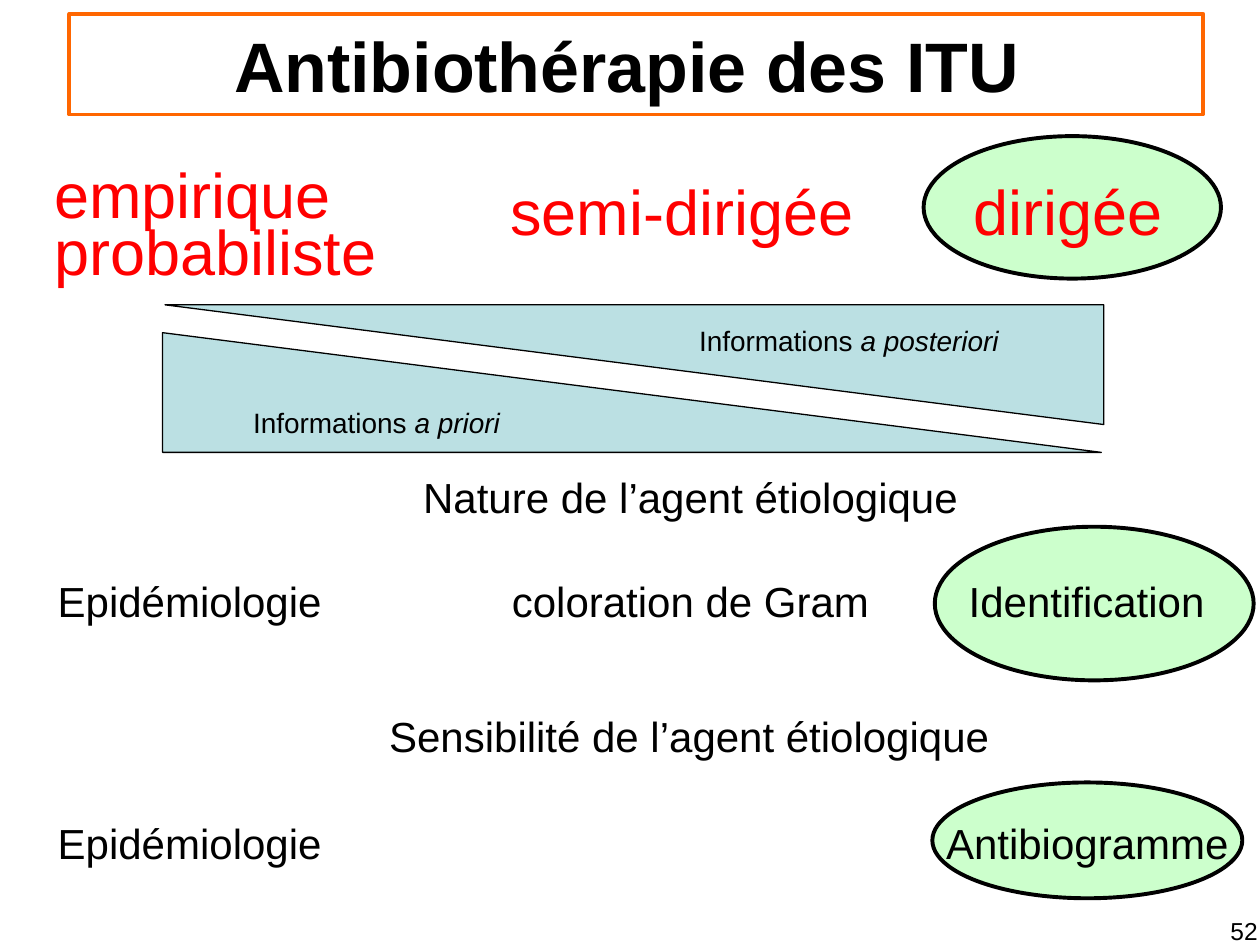
from dataclasses import dataclass

from pptx import Presentation
from pptx.dml.color import RGBColor
from pptx.enum.shapes import MSO_SHAPE
from pptx.enum.text import MSO_ANCHOR, PP_ALIGN
from pptx.shapes.autoshape import Shape
from pptx.slide import Slide
from pptx.util import Pt

COLORS = {
    "text": "000000",
    "heading": "FF0000",
    "frame": "FF6600",
    "highlight": "CCFFCC",
    "wedge": "BBE0E3",
}
FONT = "Arial"
BODY_HEIGHT = 36
IDENTIFICATION_TOP = 325.4
SENSITIVITY_TOP = 463.7


@dataclass
class Area:
    left: float
    top: float
    width: float
    height: float


@dataclass
class Label:
    area: Area
    text: str
    size: float = 24
    color: str = "text"
    italic: str = ""
    bold: bool = False
    align: PP_ALIGN = PP_ALIGN.LEFT
    wrap: bool = False
    top_inset: float = 3.6


HIGHLIGHTS = [
    Area(532.8, 447.1, 177.1, 66.2),
    Area(534.2, 301, 182.2, 87.8),
    Area(527.8, 77.8, 169.9, 81.4),
]
TITLE = Label(Area(39.6, 7.9, 648, 57.6), "Antibiothérapie des ITU ", 40,
              bold=True, align=PP_ALIGN.CENTER, wrap=True)
PRIOR = Label(Area(92.9, 190.1, 536.4, 68.4), "Informations ", 16, italic="a priori")
POSTERIOR_WEDGE = Area(94.3, 174.2, 536.4, 68.4)
POSTERIOR = Label(Area(392.4, 181.4, 186.5, 26.6), "Informations ", 16,
                  italic="a posteriori")
PAGE_NUMBER = Label(Area(557.3, 519.8, 168.5, 29.5), "52", 14,
                    align=PP_ALIGN.RIGHT, wrap=True)


def heading(text: str, area: Area) -> Label:
    return Label(area, text, 36, "heading", wrap=True, top_inset=7.2)


def body(text: str, left: float, top: float, width: float,
         align: PP_ALIGN = PP_ALIGN.LEFT) -> Label:
    return Label(Area(left, top, width, BODY_HEIGHT), text, align=align)


HEADINGS = [
    heading("empirique", Area(23.8, 81.4, 185.8, 43.9)),
    heading("probabiliste", Area(23.8, 114.5, 207.4, 43.9)),
    heading("semi-dirigée", Area(284.4, 91.4, 220.3, 58.3)),
    heading("dirigée", Area(549.4, 91.4, 143.3, 58.3)),
]
BODY = [
    body("Nature de l’agent étiologique", 234.7, 265.7, 320.4),
    body("Epidémiologie", 25.9, IDENTIFICATION_TOP, 165.6),
    body("coloration de Gram", 285.1, IDENTIFICATION_TOP, 218.9, PP_ALIGN.CENTER),
    body("Identification", 546.5, IDENTIFICATION_TOP, 149),
    body("Sensibilité de l’agent étiologique", 215.3, 402.5, 357.8),
    body("Epidémiologie", 25.9, SENSITIVITY_TOP, 165.6),
    body("Antibiogramme", 533.5, SENSITIVITY_TOP, 176.4),
]


def color(name: str) -> RGBColor:
    return RGBColor.from_string(COLORS[name])


def bounds(area: Area) -> tuple[Pt, Pt, Pt, Pt]:
    return Pt(area.left), Pt(area.top), Pt(area.width), Pt(area.height)


def draw_shape(page: Slide, kind: MSO_SHAPE, area: Area, fill: str,
               line: str, line_width: float) -> Shape:
    shape = page.shapes.add_shape(kind, *bounds(area))
    shape.shadow.inherit = False
    if fill:
        shape.fill.solid()
        shape.fill.fore_color.rgb = color(fill)
    else:
        shape.fill.background()
    shape.line.color.rgb = color(line)
    shape.line.width = Pt(line_width)
    return shape


def write_label(shape: Shape, label: Label, anchor: MSO_ANCHOR) -> None:
    frame = shape.text_frame
    frame.text = label.text
    frame.word_wrap = label.wrap
    frame.vertical_anchor = anchor
    frame.margin_top = Pt(label.top_inset)
    para = frame.paragraphs[0]
    para.alignment = label.align
    if label.italic:
        span = para.add_run()
        span.text = label.italic
        span.font.italic = True
    for span in para.runs:
        span.font.name = FONT
        span.font.size = Pt(label.size)
        span.font.bold = label.bold
        span.font.color.rgb = color(label.color)


def draw_label(page: Slide, label: Label) -> None:
    box = page.shapes.add_textbox(*bounds(label.area))
    write_label(box, label, MSO_ANCHOR.TOP)


def main() -> None:
    deck = Presentation()
    deck.slide_width, deck.slide_height = Pt(720), Pt(540)
    page = deck.slides.add_slide(deck.slide_layouts[6])

    for area in HIGHLIGHTS:
        draw_shape(page, MSO_SHAPE.OVAL, area, "highlight", "text", 2.25)

    title = draw_shape(page, MSO_SHAPE.RECTANGLE, TITLE.area, "", "frame", 2)
    write_label(title, TITLE, MSO_ANCHOR.MIDDLE)

    prior = draw_shape(page, MSO_SHAPE.RIGHT_TRIANGLE, PRIOR.area, "wedge", "text", 0.75)
    write_label(prior, PRIOR, MSO_ANCHOR.MIDDLE)
    posterior = draw_shape(page, MSO_SHAPE.RIGHT_TRIANGLE, POSTERIOR_WEDGE,
                           "wedge", "text", 0.75)
    posterior.rotation = 180

    for label in [*HEADINGS, POSTERIOR, *BODY, PAGE_NUMBER]:
        draw_label(page, label)

    deck.save("out.pptx")


if __name__ == "__main__":
    main()
